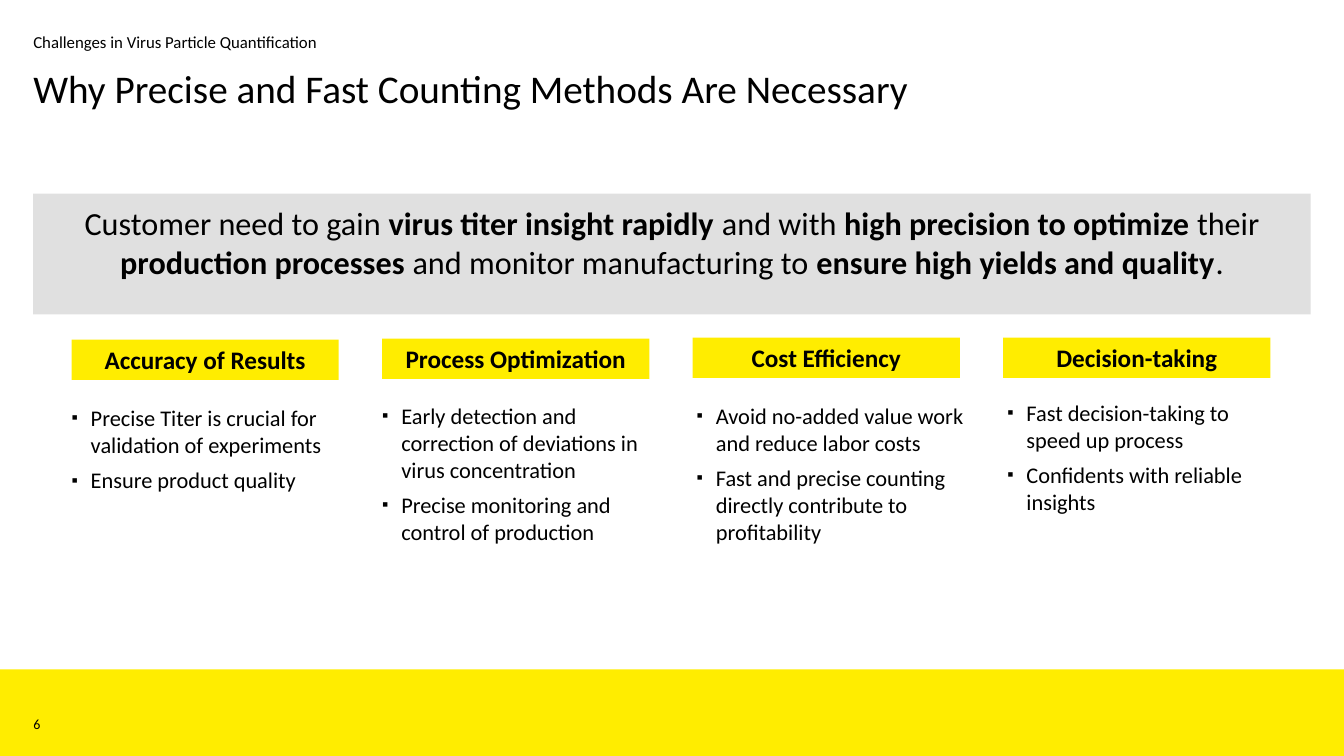
from dataclasses import dataclass

from lxml import etree
from pptx import Presentation
from pptx.dml.color import RGBColor
from pptx.enum.shapes import MSO_SHAPE
from pptx.enum.text import MSO_ANCHOR, MSO_AUTO_SIZE, PP_ALIGN
from pptx.oxml.ns import qn
from pptx.util import Inches, Pt

LEFT, CENTER = PP_ALIGN.LEFT, PP_ALIGN.CENTER
TOP, MIDDLE = MSO_ANCHOR.TOP, MSO_ANCHOR.MIDDLE
RECT = MSO_SHAPE.RECTANGLE
FIXED = MSO_AUTO_SIZE.NONE


@dataclass(frozen=True)
class Theme:
    font: str = "Calibri"
    ink: str = "000000"
    yellow: str = "FFED00"
    gray: str = "E0E0E0"
    title: int = 28
    claim: int = 23
    head: int = 18
    body: int = 16
    topic: int = 12
    number: int = 10


THEME = Theme()

TOPIC = "Challenges in Virus Particle Quantification"
TITLE = "Why Precise and Fast Counting Methods Are Necessary"
NUMBER = "6"
CLAIM = [
    ("Customer need to gain ", False),
    ("virus titer insight rapidly ", True),
    ("and with ", False),
    ("high precision to optimize ", True),
    ("their ", False),
    ("production processes ", True),
    ("and monitor manufacturing to ", False),
    ("ensure high yields and quality", True),
    (".", False),
]
COLUMNS = [
    {
        "head": "Accuracy of Results",
        "items": ["Precise Titer is crucial for validation of experiments",
                  "Ensure product quality"],
        "top": 3.37, "list": (0.71, 3.97, 2.86, 1.49),
    },
    {
        "head": "Process Optimization",
        "items": ["Early detection and correction of deviations in virus concentration",
                  "Precise monitoring and control of production"],
        "top": 3.36, "list": (3.79, 3.95, 2.65, 1.47),
    },
    {
        "head": "Cost Efficiency",
        "items": ["Avoid no-added value work and reduce labor costs",
                  "Fast and precise counting directly contribute to profitability"],
        "top": 3.35, "list": (6.91, 3.95, 2.76, 1.74),
    },
    {
        "head": "Decision-taking",
        "items": ["Fast decision-taking to speed up process",
                  "Confidents with reliable insights"],
        "top": 3.35, "list": (9.99, 3.92, 2.65, 1.2),
    },
]

WIDE, HIGH = 13.33, 7.5
EDGE = 0.33
SPAN = WIDE - 2 * EDGE
START, STEP = 0.71, 3.08
HEAD_W, HEAD_H = 2.65, 0.4
BAND = 0.86


def place(shape, box):
    shape.left, shape.top, shape.width, shape.height = map(Inches, box)


def add_bar(slide, box, color):
    bar = slide.shapes.add_shape(RECT, *map(Inches, box))
    bar.shadow.inherit = False
    bar.fill.solid()
    bar.fill.fore_color.rgb = RGBColor.from_string(color)
    bar.line.fill.background()
    return bar


def add_box(slide, box):
    return slide.shapes.add_textbox(*map(Inches, box))


def set_bullet(para):
    props = para._p.get_or_add_pPr()
    props.set("marL", str(Inches(0.19)))
    props.set("indent", str(-Inches(0.19)))
    etree.SubElement(props, qn("a:buSzPct")).set("val", "80000")
    etree.SubElement(props, qn("a:buChar")).set("char", "▪")


def write(shape, paras, size, bold=False, align=LEFT, anchor=TOP,
          after=0, inset=0, bullet=False):
    frame = shape.text_frame
    frame.word_wrap = True
    frame.auto_size = FIXED
    frame.vertical_anchor = anchor
    frame.margin_left = frame.margin_right = frame.margin_bottom = 0
    frame.margin_top = Inches(inset)
    for index, text in enumerate(paras):
        para = frame.add_paragraph() if index else frame.paragraphs[0]
        if bullet:
            set_bullet(para)
        para.alignment = align
        para.space_before = Pt(0)
        para.space_after = Pt(after)
        runs = [(text, bold)] if isinstance(text, str) else text
        for words, heavy in runs:
            run = para.add_run()
            run.text = words
            font = run.font
            font.name, font.size, font.bold = THEME.font, Pt(size), heavy
            font.color.rgb = RGBColor.from_string(THEME.ink)


def main():
    deck = Presentation()
    deck.slide_width, deck.slide_height = Inches(WIDE), Inches(HIGH)
    slide = deck.slides.add_slide(deck.slide_layouts.get_by_name("Comparison"))
    title, *lists = slide.placeholders

    add_bar(slide, (0, HIGH - BAND, WIDE, BAND), THEME.yellow)
    add_bar(slide, (EDGE, 1.92, SPAN, 1.2), THEME.gray)

    place(title, (EDGE, 0.64, SPAN, 0.78))
    write(title, [TITLE], THEME.title)
    write(add_box(slide, (EDGE, 0.26, 3.31, 0.31)), [TOPIC], THEME.topic,
          anchor=MIDDLE)
    write(add_box(slide, (EDGE, 2.02, SPAN, 1)), [CLAIM], THEME.claim,
          align=CENTER)
    write(add_box(slide, (EDGE, 7.1, 0.45, 0.17)), [NUMBER], THEME.number)

    for index, (column, body) in enumerate(zip(COLUMNS, lists)):
        box = (START + index * STEP, column["top"], HEAD_W, HEAD_H)
        head = add_bar(slide, box, THEME.yellow)
        write(head, [column["head"]], THEME.head, bold=True, align=CENTER,
              anchor=MIDDLE)
        place(body, column["list"])
        write(body, column["items"], THEME.body, after=6, inset=0.04,
              bullet=True)

    deck.save("out.pptx")


if __name__ == "__main__":
    main()
